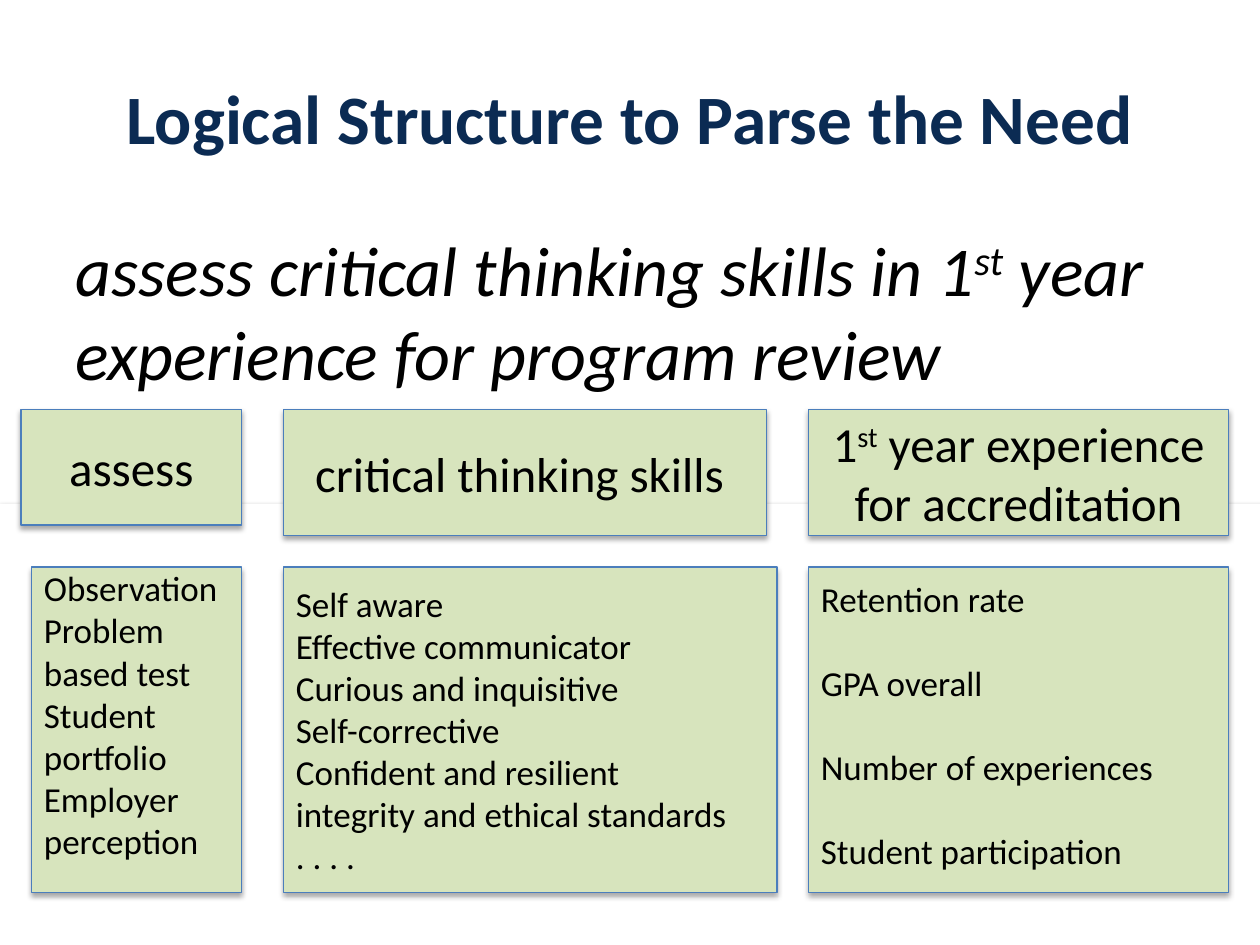
from pptx import Presentation
from pptx.dml.color import RGBColor
from pptx.enum.shapes import MSO_SHAPE as SHAPE
from pptx.enum.text import MSO_ANCHOR as ANCHOR, PP_ALIGN as ALIGN
from pptx.oxml import parse_xml
from pptx.oxml.ns import nsdecls
from pptx.util import Pt

NAVY = RGBColor(0x0B, 0x2B, 0x53)
BLACK = RGBColor(0, 0, 0)
WHITE = RGBColor(0xFF, 0xFF, 0xFF)
GREEN = RGBColor(0xD7, 0xE4, 0xBD)
BLUE = RGBColor(0x4B, 0x7E, 0xBC)

SHADOW = (
    f'<a:effectLst {nsdecls("a")}><a:outerShdw blurRad="{Pt(3.1)}" dist="{Pt(1.8)}" '
    'dir="5400000" rotWithShape="0"><a:srgbClr val="000000"><a:alpha val="35000"/>'
    '</a:srgbClr></a:outerShdw></a:effectLst>'
)


class Deck:
    """Holds the style and the current slide."""

    font = {"name": "Calibri", "bold": False, "italic": False}

    def __init__(self, width, height):
        self.prs = Presentation()
        self.prs.slide_width, self.prs.slide_height = Pt(width), Pt(height)
        self.s = self.prs.slides.add_slide(self.prs.slide_layouts[6])

    def fill_text(self, sp, paragraphs, size, color=BLACK, align=ALIGN.LEFT,
                  anchor=ANCHOR.MIDDLE, gap=0, top=3.6, **style):
        """Fill a shape; in each paragraph, text between ^ marks is raised."""
        tf = sp.text_frame
        frame = {"word_wrap": True, "vertical_anchor": anchor, "margin_top": Pt(top)}
        for key, value in frame.items():
            setattr(tf, key, value)
        for i, text in enumerate(paragraphs):
            p = tf.add_paragraph() if i else tf.paragraphs[0]
            p.alignment = align
            if i and gap:
                p.space_before = Pt(gap)
            for j, part in enumerate(text.split("^")):
                r = p.add_run()
                r.text = part
                for key, value in {**self.font, "size": Pt(size), **style}.items():
                    setattr(r.font, key, value)
                r.font.color.rgb = color
                if j % 2:
                    r.font._element.set("baseline", "30000")

    def text(self, x, y, w, h, paragraphs, size, **style):
        sp = self.s.shapes.add_textbox(Pt(x), Pt(y), Pt(w), Pt(h))
        self.fill_text(sp, paragraphs, size, **style)

    def box(self, x, y, w, h, fill=GREEN, line=BLUE):
        sp = self.s.shapes.add_shape(SHAPE.RECTANGLE, Pt(x), Pt(y), Pt(w), Pt(h))
        sp.fill.solid()
        sp.fill.fore_color.rgb = fill
        if line is None:
            sp.line.fill.background()
        else:
            sp.line.color.rgb = line
            sp.line.width = Pt(0.75)
        sp._element.spPr.append(parse_xml(SHADOW))
        return sp

    def text_box(self, x, y, w, h, paragraphs, size, **style):
        self.fill_text(self.box(x, y, w, h), paragraphs, size, **style)


def main():
    d = Deck(720, 540)

    # Lower panel, title and statement
    d.box(0, 288, 732, 252, fill=WHITE, line=None)
    d.text(36, 21.6, 648, 90, ["Logical Structure to Parse the Need"], 39.6,
           color=NAVY, align=ALIGN.CENTER, bold=True)
    d.text(36, 126, 648, 356.4,
           ["assess critical thinking skills in 1^st^ year experience for program review"],
           40, anchor=ANCHOR.TOP, italic=True)

    # Headings: left, width, height, text
    for x, w, h, text in [
        (162, 276, 72, "critical thinking skills "),
        (12, 126, 66, "assess"),
        (462, 240, 72, "1^st^ year experience for accreditation"),
    ]:
        d.text_box(x, 234, w, h, [text], 28, align=ALIGN.CENTER)

    # Detail lists: left, width, items, layout
    for x, w, items, layout in [
        (18, 120, ["Observation", "Problem based test", "Student portfolio",
                   "Employer perception"], {"anchor": ANCHOR.TOP, "top": 0}),
        (162, 282, ["Self aware", "Effective communicator", "Curious and inquisitive",
                    "Self-corrective", "Confident and resilient",
                    "integrity and ethical standards", ". . . ."], {}),
        (462, 240, ["Retention rate", "GPA overall", "Number of experiences",
                    "Student participation"], {"anchor": ANCHOR.TOP, "top": 6, "gap": 24}),
    ]:
        d.text_box(x, 324, w, 186, items, 20, **layout)

    d.prs.save("out.pptx")


if __name__ == "__main__":
    main()
